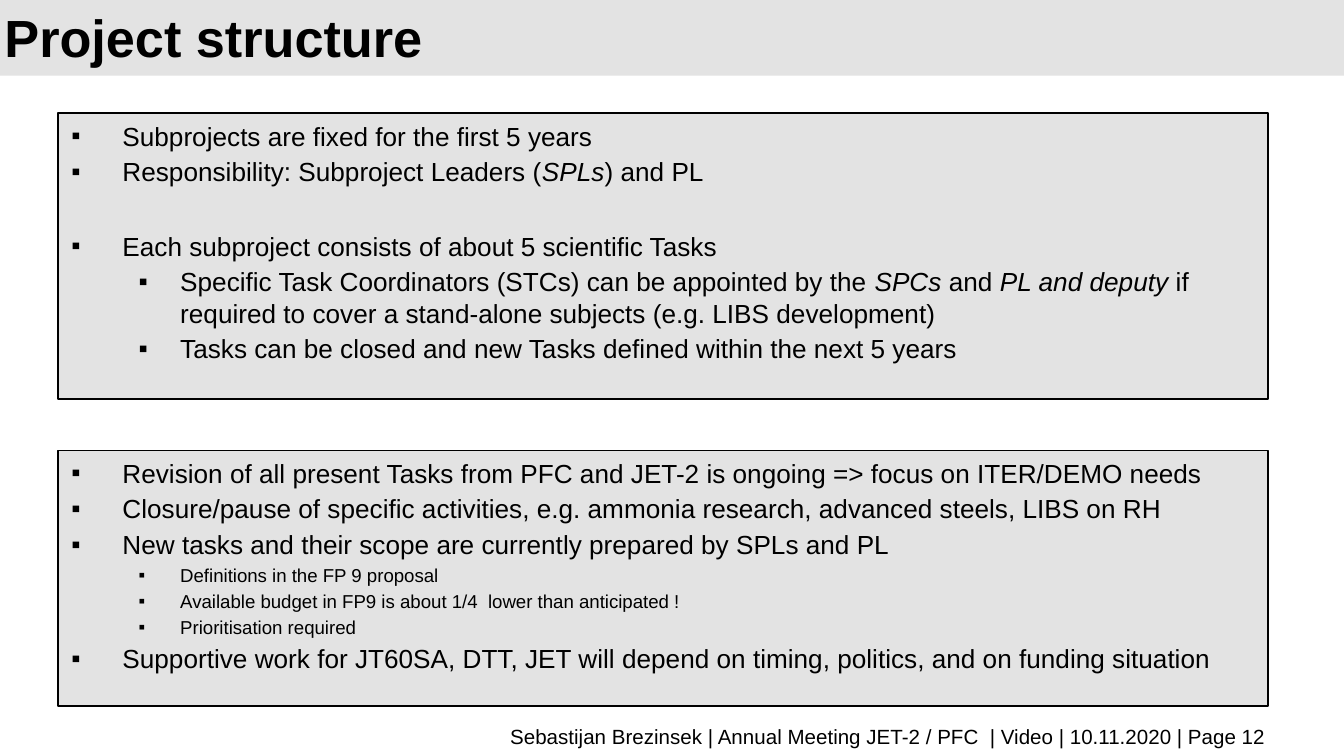
"""Build the project structure slide with two bulleted panels."""
from typing import NamedTuple

from lxml import etree
from pptx import Presentation
from pptx import util as u
from pptx.dml.color import RGBColor
from pptx.enum import shapes, text
from pptx.oxml.ns import qn

WIDTH = 10
HEIGHT = WIDTH * 9 / 16
FONT, INK, GREY = "Arial", "000000", "E3E3E3"
INDENTS = ((0.38, -0.38), (0.81, -0.31))


class Area(NamedTuple):
    """Percent shares of the slide's width and height."""
    x: float
    y: float
    w: float
    h: float


class Item(NamedTuple):
    words: str
    level: int = 0
    size: float = 14
    gap: float = 2.3


class Panel(NamedTuple):
    area: Area
    items: tuple[Item, ...]


class Label(NamedTuple):
    area: Area
    words: str
    size: float
    bold: bool
    align: text.PP_ALIGN
    pitch: float


PANELS = (
    Panel(Area(4.33, 15, 90, 37.8), (
        Item("Subprojects are fixed for the first 5 years"),
        Item("Responsibility: Subproject Leaders (*SPLs*) and PL"),
        Item("Each subproject consists of about 5 scientific Tasks", gap=23),
        Item("Specific Task Coordinators (STCs) can be appointed by the *SPCs* and "
             "*PL and deputy* if required to cover a stand-alone subjects "
             "(e.g. LIBS development)", 1),
        Item("Tasks can be closed and new Tasks defined within the next 5 years", 1),
    )),
    Panel(Area(4.33, 59.6, 90, 33.8), (
        Item("Revision of all present Tasks from PFC and JET-2 is ongoing "
             "=> focus on ITER/DEMO needs"),
        Item("Closure/pause of specific activities, e.g. ammonia research, "
             "advanced steels, LIBS on RH"),
        Item("New tasks and their scope are currently prepared by SPLs and PL"),
        Item("Definitions in the FP 9 proposal", 1, 10, 2),
        Item("Available budget in FP9 is about 1/4  lower than anticipated !", 1, 10, 2),
        Item("Prioritisation required", 1, 10, 2),
        Item("Supportive work for JT60SA, DTT, JET will depend on timing, politics, "
             "and on funding situation"),
    )),
)
LABELS = (
    Label(Area(-0.65, 1.6, 82.5, 6.8), "Project structure", 28, True,
          text.PP_ALIGN.LEFT, u.Pt(32)),
    Label(Area(5.1, 95.5, 90.1, 3.9),
          "Sebastijan Brezinsek | Annual Meeting JET-2 / PFC  | Video | 10.11.2020 | Page 12",
          11, False, text.PP_ALIGN.RIGHT, 1.0),
)


def tint(code: str) -> RGBColor:
    return RGBColor.from_string(code)


def place(area: Area) -> tuple[u.Length, ...]:
    across, down = WIDTH / 100, HEIGHT / 100
    return (u.Inches(area.x * across), u.Inches(area.y * down),
            u.Inches(area.w * across), u.Inches(area.h * down))


def style(run, size: float, bold: bool = False, slant: bool = False) -> None:
    font = run.font
    font.name, font.size, font.bold, font.italic = FONT, u.Pt(size), bold, slant
    font.color.rgb = tint(INK)


def draw_box(slide, area: Area, edge: bool):
    box = slide.shapes.add_shape(shapes.MSO_SHAPE.RECTANGLE, *place(area))
    box.shadow.inherit = False
    box.fill.solid()
    box.fill.fore_color.rgb = tint(GREY)
    if edge:
        box.line.color.rgb = tint(INK)
        box.line.width = u.Pt(1)
    else:
        box.line.fill.background()
    return box


def write_item(para, item: Item, first: bool) -> None:
    para.alignment = text.PP_ALIGN.LEFT
    para.level = item.level
    para.space_before = u.Pt(0 if first else item.gap)
    props = para._p.get_or_add_pPr()
    left, hang = INDENTS[item.level]
    props.set("marL", str(u.Inches(left)))
    props.set("indent", str(u.Inches(hang)))
    etree.SubElement(props, qn("a:buFont")).set("typeface", FONT)
    etree.SubElement(props, qn("a:buChar")).set("char", "▪")
    for spot, part in enumerate(item.words.split("*")):
        run = para.add_run()
        run.text = part
        style(run, item.size, slant=spot % 2 == 1)


def draw_panel(slide, panel: Panel) -> None:
    frame = draw_box(slide, panel.area, True).text_frame
    frame.word_wrap = True
    frame.vertical_anchor = text.MSO_ANCHOR.TOP
    for spot, item in enumerate(panel.items):
        para = frame.add_paragraph() if spot else frame.paragraphs[0]
        write_item(para, item, spot == 0)


def draw_label(slide, label: Label) -> None:
    frame = slide.shapes.add_textbox(*place(label.area)).text_frame
    frame.word_wrap = True
    frame.vertical_anchor = text.MSO_ANCHOR.MIDDLE
    frame.margin_top = frame.margin_bottom = 0
    frame.text = label.words
    para = frame.paragraphs[0]
    para.alignment = label.align
    para.line_spacing = label.pitch
    style(para.runs[0], label.size, label.bold)


def main() -> None:
    deck = Presentation()
    deck.slide_width, deck.slide_height = u.Inches(WIDTH), u.Inches(HEIGHT)
    slide = deck.slides.add_slide(deck.slide_layouts[6])
    draw_box(slide, Area(0, 0, 100, 10), False)
    for panel in PANELS:
        draw_panel(slide, panel)
    for label in LABELS:
        draw_label(slide, label)
    deck.save("out.pptx")


if __name__ == "__main__":
    main()
